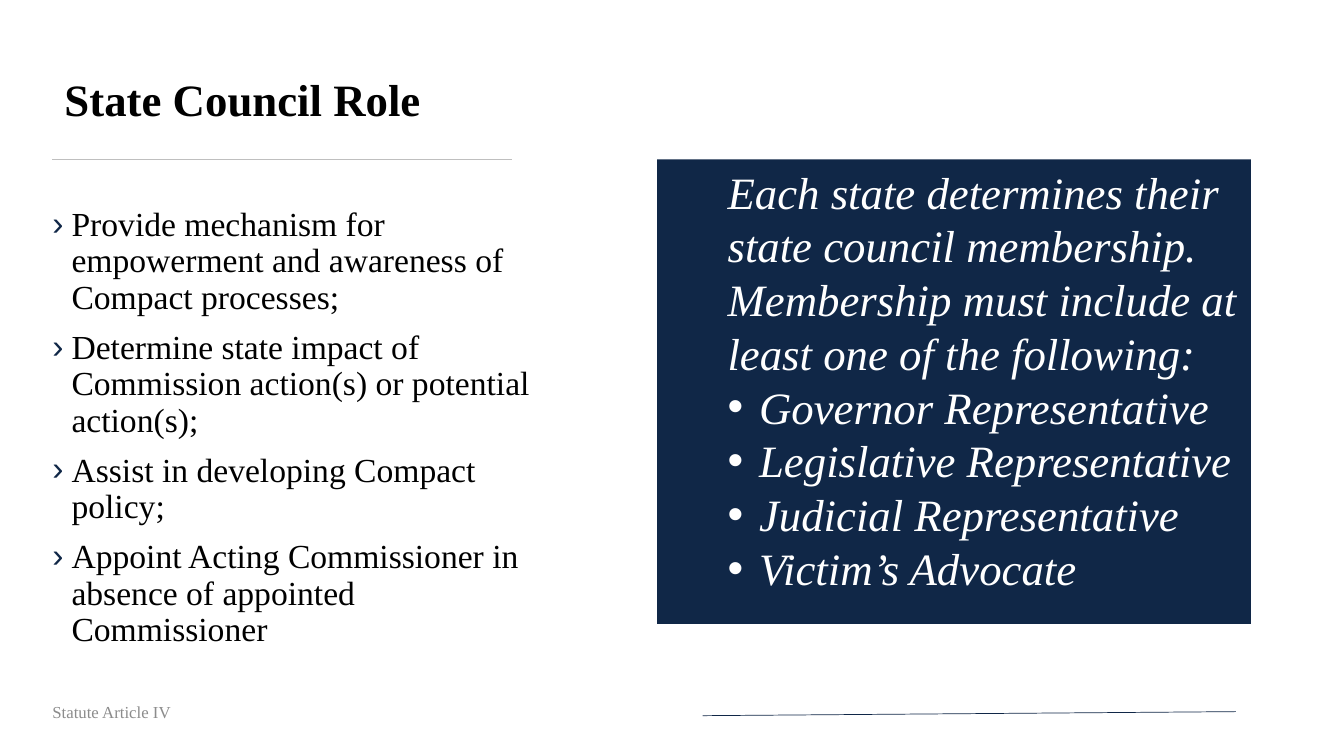
from lxml import etree
from pptx import Presentation
from pptx.dml.color import RGBColor
from pptx.enum.shapes import MSO_CONNECTOR, MSO_SHAPE
from pptx.enum.text import MSO_ANCHOR, MSO_AUTO_SIZE
from pptx.oxml.ns import qn
from pptx.util import Pt

STRAIGHT = MSO_CONNECTOR.STRAIGHT
RECTANGLE = MSO_SHAPE.RECTANGLE
TOP, MIDDLE = MSO_ANCHOR.TOP, MSO_ANCHOR.MIDDLE
FIT_SHAPE, FIT_NONE = MSO_AUTO_SIZE.SHAPE_TO_FIT_TEXT, MSO_AUTO_SIZE.NONE

COLORS = {
    "navy": "102747",
    "rule": "BFBFBF",
    "black": "000000",
    "white": "FFFFFF",
    "gray": "8C8C8C",
}

LEFT = 37.44
PANEL_TOP = 113.76

DUTIES = [
    "Provide mechanism for empowerment and awareness of Compact processes;",
    "Determine state impact of Commission action(s) or potential action(s);",
    "Assist in developing Compact policy;",
    "Appoint Acting Commissioner in absence of appointed Commissioner",
]
MEMBERSHIP_RULE = (
    "Each state determines their state council membership. "
    "Membership must include at least one of the following:"
)
MEMBERS = [
    "Governor Representative",
    "Legislative Representative",
    "Judicial Representative",
    "Victim’s Advocate",
]


def rgb(color):
    return RGBColor.from_string(COLORS[color])


def write(paragraph, text, size=24, color="black", bold=False, italic=False,
          spacing=None, before=0, bullet=None, bullet_color=None, indent=0):
    """Fill a paragraph with one formatted run and an optional hanging bullet."""
    run = paragraph.add_run()
    run.text = text
    font = run.font
    font.name = "Times New Roman"
    font.size = Pt(size)
    font.bold, font.italic = bold, italic
    font.color.rgb = rgb(color)
    paragraph.space_before = Pt(before)
    if spacing:
        paragraph.line_spacing = spacing
    if bullet:
        properties = paragraph._p.get_or_add_pPr()
        properties.set("marL", str(Pt(indent)))
        properties.set("indent", str(-Pt(indent)))
        if bullet_color:
            tint = etree.SubElement(properties, qn("a:buClr"))
            etree.SubElement(tint, qn("a:srgbClr"), val=COLORS[bullet_color])
        etree.SubElement(properties, qn("a:buFont"), typeface="Arial")
        etree.SubElement(properties, qn("a:buChar"), char=bullet)


class SlideBuilder:
    """Places elements on one slide; all lengths are in points."""

    def __init__(self, slide):
        self.shapes = slide.shapes

    def panel(self, left, top, width, height, color):
        block = self.shapes.add_shape(
            RECTANGLE, Pt(left), Pt(top), Pt(width), Pt(height))
        block.shadow.inherit = False
        block.fill.solid()
        block.fill.fore_color.rgb = rgb(color)
        block.line.fill.background()

    def rule(self, start, end, color, width=0.5):
        line = self.shapes.add_connector(STRAIGHT, *map(Pt, start + end))
        line.line.color.rgb = rgb(color)
        line.line.width = Pt(width)
        etree.SubElement(line._element.spPr, qn("a:effectLst"))

    def text(self, left, top, width, height, anchor=TOP,
             insets=(0, 0, 0, 0), fit=FIT_NONE):
        """Add an empty wrapping text box and return its text frame."""
        frame = self.shapes.add_textbox(
            Pt(left), Pt(top), Pt(width), Pt(height)).text_frame
        frame.word_wrap = True
        frame.auto_size = fit
        frame.vertical_anchor = anchor
        (frame.margin_left, frame.margin_top,
         frame.margin_right, frame.margin_bottom) = map(Pt, insets)
        return frame

    def bullets(self, frame, items, **style):
        for item in items:
            first_is_free = not frame.paragraphs[0].runs
            paragraph = frame.paragraphs[0] if first_is_free else frame.add_paragraph()
            write(paragraph, item, **style)


def main():
    deck = Presentation()
    deck.slide_width, deck.slide_height = Pt(960), Pt(540)
    builder = SlideBuilder(deck.slides.add_slide(deck.slide_layouts[6]))

    builder.panel(469.44, PANEL_TOP, 424.08, 331.92, "navy")
    builder.rule((501.84, 511.2), (882.72, 508.32), "navy")

    title = builder.text(46.08, 55.44, 328.32, 35.28, MIDDLE, fit=FIT_SHAPE)
    write(title.paragraphs[0], "State Council Role", size=32, bold=True, spacing=0.9)

    duties = builder.text(LEFT, 148.32, 345.6, 323.28)
    builder.bullets(duties, DUTIES, spacing=0.9, before=10,
                    bullet="›", bullet_color="navy", indent=13.68)

    footer = builder.text(LEFT, 493.92, 324, 28.8, MIDDLE, (0, 3.6, 7.2, 3.6))
    write(footer.paragraphs[0], "Statute Article IV", size=12, color="gray")

    builder.rule((LEFT, PANEL_TOP), (365.76, PANEL_TOP), "rule")

    membership = builder.text(512.64, PANEL_TOP, 396, 339.12,
                              insets=(7.2, 3.6, 7.2, 3.6), fit=FIT_SHAPE)
    panel_style = {"size": 32, "color": "white", "italic": True}
    write(membership.paragraphs[0], MEMBERSHIP_RULE, **panel_style)
    builder.bullets(membership, MEMBERS, bullet="•", indent=22.5, **panel_style)

    deck.save("out.pptx")


if __name__ == "__main__":
    main()
